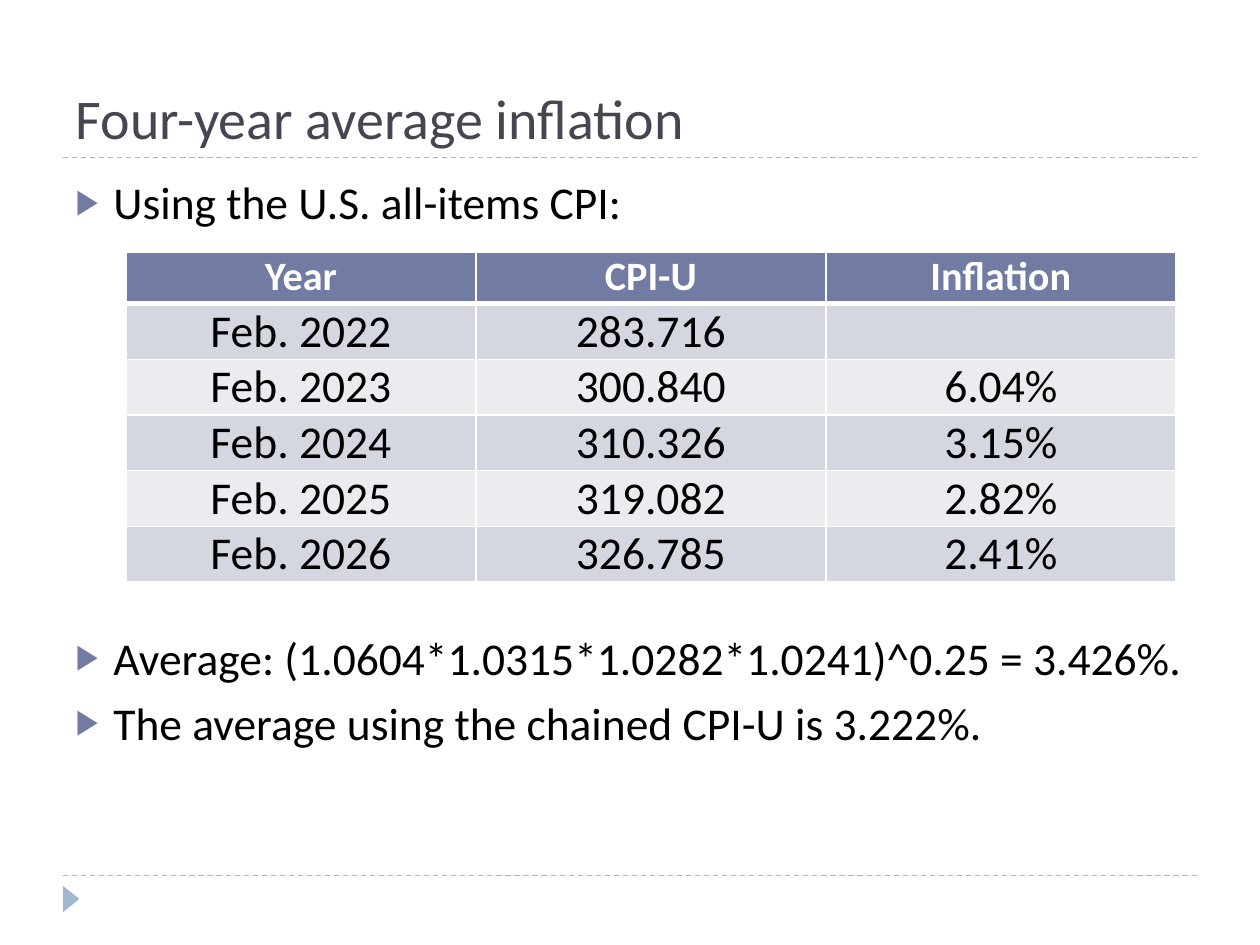
"""Build the slide on four-year average inflation."""
from dataclasses import dataclass

from pptx import Presentation
from pptx.dml.color import RGBColor
from pptx.enum.dml import MSO_LINE_DASH_STYLE as Dash
from pptx.enum.shapes import MSO_CONNECTOR as Connector, MSO_SHAPE as Shape
from pptx.enum.text import MSO_ANCHOR as Anchor, MSO_AUTO_SIZE as AutoSize, PP_ALIGN as Align
from pptx.oxml.ns import qn
from pptx.util import Pt

ACCENT, PALE, WHITE, BLACK = "727CA3", "9FB8CD", "FFFFFF", "000000"
BANDS = ("D5D7E0", "EBECF0")
SPACING = 6
TABLE_GAP = 229


@dataclass
class Bullet:
    text: str
    before: float


@dataclass
class CpiRow:
    period: str
    index: str
    inflation: str


BULLETS = [
    Bullet("Using the U.S. all-items CPI:", 0),
    Bullet("Average: (1.0604*1.0315*1.0282*1.0241)^0.25 = 3.426%.", TABLE_GAP),
    Bullet("The average using the chained CPI-U is 3.222%.", SPACING),
]
HEADER = CpiRow("Year", "CPI-U", "Inflation")
CPI_ROWS = [
    CpiRow("Feb. 2022", "283.716", ""),
    CpiRow("Feb. 2023", "300.840", "6.04%"),
    CpiRow("Feb. 2024", "310.326", "3.15%"),
    CpiRow("Feb. 2025", "319.082", "2.82%"),
    CpiRow("Feb. 2026", "326.785", "2.41%"),
]


def color(value: str) -> RGBColor:
    return RGBColor.from_string(value)


def write(paragraph, text: str, *, size=26, fill=BLACK, bold=False, align=Align.LEFT, before=0) -> None:
    paragraph.alignment = align
    paragraph.space_before = Pt(before)
    if not text:
        return
    run = paragraph.add_run()
    run.text = text
    run.font.name = "Calibri"
    run.font.size = Pt(size)
    run.font.bold = bold
    run.font.color.rgb = color(fill)


def place(placeholder, left: float, top: float, width: float, height: float, anchor):
    placeholder.left, placeholder.top = Pt(left), Pt(top)
    placeholder.width, placeholder.height = Pt(width), Pt(height)
    frame = placeholder.text_frame
    frame.auto_size = AutoSize.NONE
    frame.word_wrap = True
    frame.vertical_anchor = anchor
    return frame


def add_rule(slide, y: float) -> None:
    rule = slide.shapes.add_connector(Connector.STRAIGHT, Pt(36), Pt(y), Pt(684), Pt(y))
    rule.line.color.rgb = color(PALE)
    rule.line.width = Pt(0.75)
    rule.line.dash_style = Dash.DASH
    properties = rule._element.spPr
    properties.append(properties.makeelement(qn("a:effectLst"), {}))


def add_marker(slide) -> None:
    marker = slide.shapes.add_shape(Shape.ISOSCELES_TRIANGLE, Pt(33.1), Pt(509), Pt(15.1), Pt(9.4))
    marker.rotation = 90
    marker.shadow.inherit = False
    marker.fill.solid()
    marker.fill.fore_color.rgb = color(PALE)
    marker.line.fill.background()


def add_bullet(paragraph, bullet: Bullet) -> None:
    properties = paragraph._p.get_or_add_pPr()
    properties.set("marL", str(Pt(21.6)))
    properties.set("indent", str(-Pt(21.6)))
    tint = properties.makeelement(qn("a:buClr"), {})
    tint.append(tint.makeelement(qn("a:srgbClr"), {"val": ACCENT}))
    properties.append(tint)
    properties.append(properties.makeelement(qn("a:buSzPct"), {"val": "76000"}))
    properties.append(properties.makeelement(qn("a:buChar"), {"char": "▶"}))
    write(paragraph, bullet.text, before=bullet.before)


def add_borders(cell, **widths: float) -> None:
    properties = cell._tc.get_or_add_tcPr()
    for side, width in widths.items():
        border = properties.makeelement(qn(f"a:ln{side}"), {"w": str(Pt(width))})
        solid = border.makeelement(qn("a:solidFill"), {})
        solid.append(solid.makeelement(qn("a:srgbClr"), {"val": WHITE}))
        border.append(solid)
        properties.append(border)


def add_cpi_table(slide, left: float, top: float, width: float, row_height: float) -> None:
    rows = [HEADER, *CPI_ROWS]
    table = slide.shapes.add_table(
        len(rows), 3, Pt(left), Pt(top), Pt(width), Pt(row_height * len(rows))
    ).table
    table.horz_banding = False
    for number, row in enumerate(rows):
        heading = number == 0
        for column, text in enumerate((row.period, row.index, row.inflation)):
            cell = table.cell(number, column)
            add_borders(cell, L=1, R=1, T=3 if number == 1 else 1, B=3 if heading else 1)
            cell.fill.solid()
            cell.fill.fore_color.rgb = color(ACCENT if heading else BANDS[(number - 1) % 2])
            cell.margin_left = cell.margin_right = Pt(5)
            cell.margin_top = cell.margin_bottom = 0
            cell.vertical_anchor = Anchor.TOP if heading else Anchor.BOTTOM
            write(cell.text_frame.paragraphs[0], text, size=23 if heading else 26,
                  fill=WHITE if heading else BLACK, bold=heading, align=Align.CENTER)


def main() -> None:
    deck = Presentation()
    deck.slide_width, deck.slide_height = Pt(720), Pt(540)
    slide = deck.slides.add_slide(deck.slide_layouts[1])
    for y in (500.4, 90):
        add_rule(slide, y)
    add_marker(slide)

    heading = place(slide.shapes.title, 36, 12, 648, 78, Anchor.BOTTOM)
    write(heading.paragraphs[0], "Four-year average inflation", size=32, fill="464653")

    body = place(slide.placeholders[1], 36, 96, 648, 389, Anchor.TOP)
    for number, bullet in enumerate(BULLETS):
        add_bullet(body.add_paragraph() if number else body.paragraphs[0], bullet)

    add_cpi_table(slide, 72, 144, 600, 29.5)
    deck.save("out.pptx")


if __name__ == "__main__":
    main()
